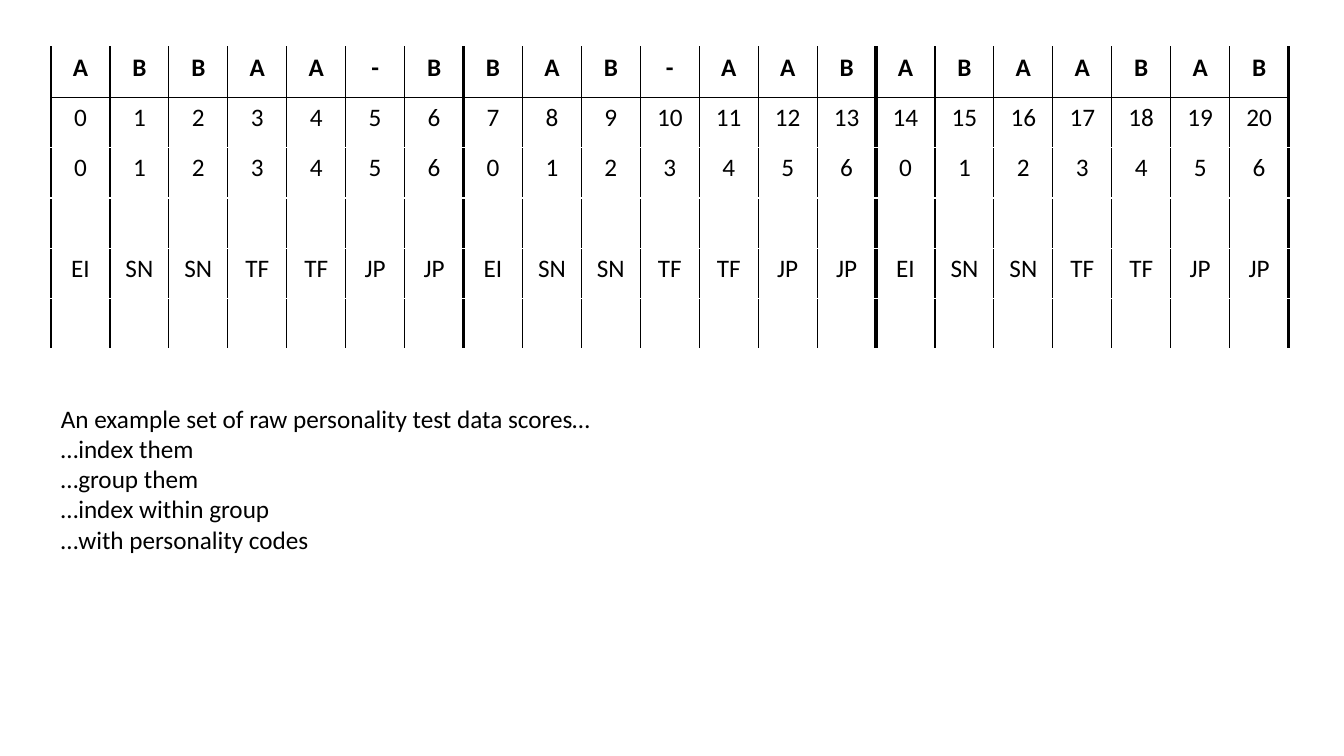
import lxml.etree
import pptx
import pptx.dml.color
import pptx.enum.text
import pptx.oxml.ns
import pptx.util

EMU_PER_PX = 914400 / 100.8
BLACK = pptx.dml.color.RGBColor(0x00, 0x00, 0x00)
WHITE = pptx.dml.color.RGBColor(0xFF, 0xFF, 0xFF)
FONT = "Calibri"
THIN, THICK = 1, 3

GROUP_SIZE = 7
GROUP_COUNT = 3
ANSWERS = list("ABBAA-BBAB-AABABAABAB")
CODES = ["EI", "SN", "SN", "TF", "TF", "JP", "JP"]
SCORE_ROWS = [
    ANSWERS,
    [str(index) for index in range(len(ANSWERS))],
    [str(index % GROUP_SIZE) for index in range(len(ANSWERS))],
    [""] * len(ANSWERS),
    CODES * GROUP_COUNT,
    [""] * len(ANSWERS),
]
STEPS = [
    "An example set of raw personality test data scores…",
    "…index them",
    "…group them",
    "…index within group",
    "…with personality codes",
]


def px(length):
    return pptx.util.Emu(round(length * EMU_PER_PX))


def add_run(paragraph, text, bold=False):
    run = paragraph.add_run()
    run.text = text
    run.font.name = FONT
    run.font.size = pptx.util.Pt(18)
    run.font.bold = bold
    run.font.color.rgb = BLACK


def add_border(cell, side, color, width):
    qn = pptx.oxml.ns.qn
    properties = cell._tc.get_or_add_tcPr()
    line = lxml.etree.SubElement(properties, qn(f"a:ln{side}"), w=str(pptx.util.Pt(width)))
    fill = lxml.etree.SubElement(line, qn("a:solidFill"))
    lxml.etree.SubElement(fill, qn("a:srgbClr"), val=str(color))


def format_cell(cell, row, column):
    starts_group = column > 0 and column % GROUP_SIZE == 0
    ends_group = column % GROUP_SIZE == GROUP_SIZE - 1
    add_border(cell, "L", BLACK, THICK if starts_group else THIN)
    add_border(cell, "R", BLACK, THICK if ends_group else THIN)
    add_border(cell, "T", BLACK if row == 1 else WHITE, THIN)
    add_border(cell, "B", BLACK if row == 0 else WHITE, THIN)
    cell.fill.solid()
    cell.fill.fore_color.rgb = WHITE


def add_score_table(slide, left, top, width, height):
    row_count, column_count = len(SCORE_ROWS), len(ANSWERS)
    frame = slide.shapes.add_table(
        row_count, column_count, px(left), px(top), px(width), px(height)
    )
    table = frame.table
    table.first_row = False
    table.horz_banding = False
    for row, texts in enumerate(SCORE_ROWS):
        for column, text in enumerate(texts):
            cell = table.cell(row, column)
            format_cell(cell, row, column)
            paragraph = cell.text_frame.paragraphs[0]
            paragraph.alignment = pptx.enum.text.PP_ALIGN.CENTER
            if text:
                add_run(paragraph, text, bold=row == 0)


def add_steps(slide, left, top, width, height):
    shape = slide.shapes.add_textbox(px(left), px(top), px(width), px(height))
    text_frame = shape.text_frame
    text_frame.word_wrap = True
    text_frame.auto_size = pptx.enum.text.MSO_AUTO_SIZE.SHAPE_TO_FIT_TEXT
    for index, step in enumerate(STEPS):
        paragraph = text_frame.add_paragraph() if index else text_frame.paragraphs[0]
        add_run(paragraph, step)


def main():
    presentation = pptx.Presentation()
    presentation.slide_width = px(1344)
    presentation.slide_height = px(756)
    slide = presentation.slides.add_slide(presentation.slide_layouts[6])
    add_score_table(slide, 51, 47, 1238, 302)
    add_steps(slide, 51, 398, 713, 193)
    presentation.save("out.pptx")


if __name__ == "__main__":
    main()
